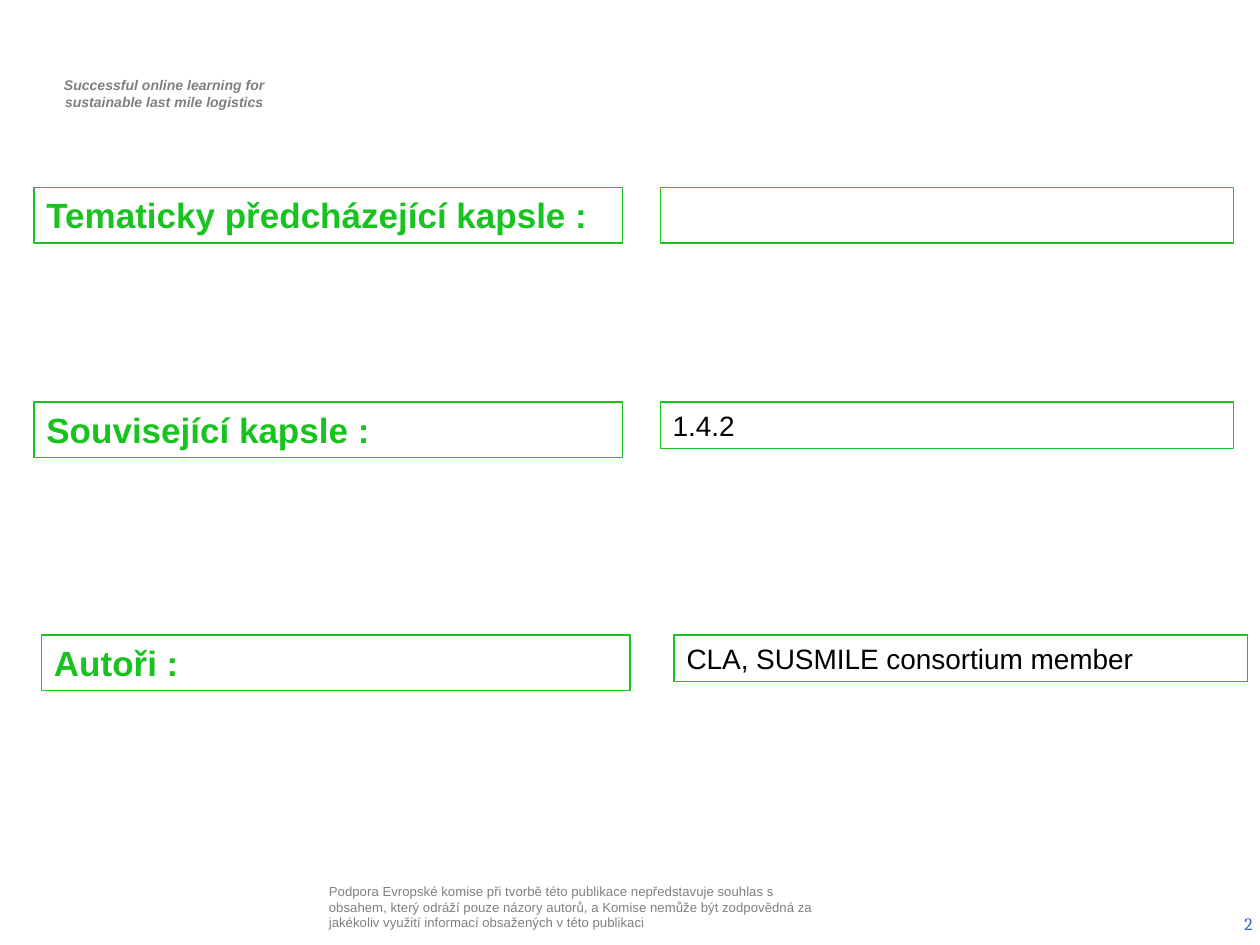
from pptx import Presentation
from pptx.dml.color import RGBColor
from pptx.enum.shapes import MSO_SHAPE
from pptx.enum.text import MSO_ANCHOR, PP_ALIGN
from pptx.util import Inches, Pt

GREEN = "18C320"
HEADING = {"size": Pt(20), "bold": True}
VALUE = {"size": Pt(16)}


def color(value):
    """Turn a hex string into a colour."""
    return RGBColor.from_string(value)


def write(sp, lines, font, fill, align=PP_ALIGN.LEFT, **frame):
    """Write lines into a shape with the given font and frame values."""
    tf = sp.text_frame
    for name, value in {"word_wrap": True, **frame}.items():
        setattr(tf, name, value)
    for i, line in enumerate(lines):
        p = tf.add_paragraph() if i else tf.paragraphs[0]
        p.alignment = align
        r = p.add_run()
        r.text = line
        for name, value in {"name": "Arial", **font}.items():
            setattr(r.font, name, value)
        r.font.color.rgb = color(fill)


def add_text(s, box, lines, font, fill, **frame):
    """Add a text box at the given box."""
    sp = s.shapes.add_textbox(*map(Inches, box))
    write(sp, lines, font, fill, **frame)


def add_frame(s, box, text, font, fill):
    """Add a green-outlined white box, with text if there is any."""
    sp = s.shapes.add_shape(MSO_SHAPE.RECTANGLE, *map(Inches, box))
    sp.shadow.inherit = False
    sp.fill.solid()
    sp.fill.fore_color.rgb = color("FFFFFF")
    sp.line.color.rgb = color(GREEN)
    sp.line.width = Pt(0.75)
    if text:
        write(sp, [text], font, fill, vertical_anchor=MSO_ANCHOR.TOP)


def add_row(s, box, gap, label, value, value_height):
    """Add a label box and, after the gap, its value box."""
    left, top, width, height = box
    add_frame(s, box, label, HEADING, GREEN)
    value_box = (left + width + gap, top, 4.55, value_height)
    add_frame(s, value_box, value, VALUE, "000000")


def add_header(s, box):
    """Add the project motto."""
    lines = ["Successful online learning for", "sustainable last mile logistics"]
    font = {"size": Pt(8), "bold": True, "italic": True}
    add_text(s, box, lines, font, "7F7F7F", align=PP_ALIGN.CENTER)


def add_footer(s, box, number_box):
    """Add the disclaimer and the slide number."""
    text = ("Podpora Evropské komise při tvorbě této publikace nepředstavuje souhlas s "
            "obsahem, který odráží pouze názory autorů, a Komise nemůže být zodpovědná za "
            "jakékoliv využití informací obsažených v této publikaci")
    add_text(s, box, [text], {"size": Pt(7.5)}, "808080", margin_left=Inches(0.04),
             margin_right=Inches(0.04), margin_top=Inches(0.01), margin_bottom=0)
    add_text(s, number_box, ["2"], {"size": Pt(10), "name": "Cambria"}, "3366CC",
             align=PP_ALIGN.RIGHT, vertical_anchor=MSO_ANCHOR.MIDDLE)


def main():
    """Build and save the slide."""
    prs = Presentation()
    prs.slide_width, prs.slide_height = Inches(10), Inches(7.5)
    s = prs.slides.add_slide(prs.slide_layouts[6])
    add_header(s, (0.29, 0.56, 2.03, 0.37))
    add_footer(s, (2.57, 7, 4.02, 0.5), (7.71, 7.13, 2.33, 0.4))
    rows = [
        (0.27, 1.49, 0.3, "Tematicky předcházející kapsle :", "", 0.44),
        (0.27, 3.19, 0.3, "Související kapsle :", "1.4.2", 0.37),
        (0.33, 5.04, 0.35, "Autoři :", "CLA, SUSMILE consortium member", 0.37),
    ]
    for left, top, gap, label, value, value_height in rows:
        add_row(s, (left, top, 4.67, 0.44), gap, label, value, value_height)
    prs.save("out.pptx")


if __name__ == "__main__":
    main()
